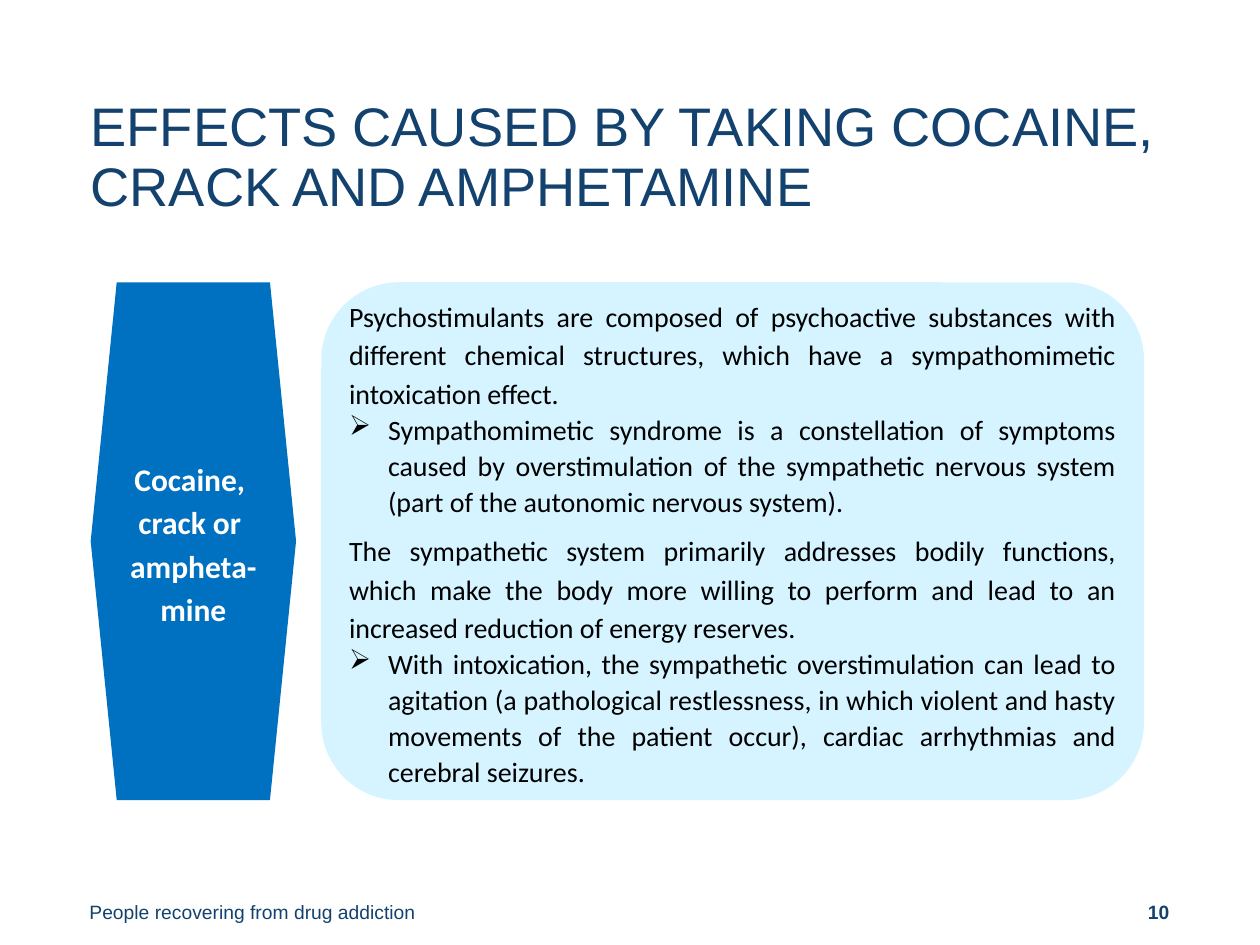
from dataclasses import dataclass

from lxml.etree import SubElement
from pptx import Presentation
from pptx.dml.color import RGBColor
from pptx.enum.shapes import MSO_SHAPE
from pptx.enum.text import MSO_ANCHOR, PP_ALIGN
from pptx.oxml.ns import qn
from pptx.util import Inches, Pt

COLS, ROWS = 100, 75


@dataclass(frozen=True)
class Theme:
    heading_font: str = "Arial"
    body_font: str = "Calibri"
    navy: str = "13426F"
    blue: str = "0070C0"
    pale: str = "D5F4FF"
    white: str = "FFFFFF"
    black: str = "000000"
    title_size: int = 31
    label_size: int = 18
    body_size: int = 16
    footer_size: int = 11


def add_bullet(p, char, indent):
    pPr = p._p.get_or_add_pPr()
    pPr.set("marL", str(Inches(indent)))
    pPr.set("indent", str(-Inches(indent)))
    SubElement(pPr, qn("a:buChar")).set("char", char)


def write(tf, text, *, font, size, color, bold=False, align=PP_ALIGN.LEFT,
          spacing=1.0, before=None, bullet=None):
    """Fill the first empty paragraph of tf, or append one; \\n breaks a line."""
    p = tf.paragraphs[-1]
    if p.runs:
        p = tf.add_paragraph()
    if bullet:
        add_bullet(p, bullet, 0.31)
    p.alignment, p.line_spacing = align, spacing
    if before:
        p.space_before = Pt(before)
    for i, line in enumerate(text.split("\n")):
        if i:
            p.add_line_break()
        r = p.add_run()
        r.text = line
        r.font.name, r.font.size, r.font.bold = font, Pt(size), bold
        r.font.color.rgb = RGBColor.from_string(color)


class SlideBuilder:
    def __init__(self, prs, theme):
        self.theme = theme
        self.slide = prs.slides.add_slide(prs.slide_layouts[6])
        self.cell_w = prs.slide_width / COLS
        self.cell_h = prs.slide_height / ROWS

    def place(self, col, row, cols, rows):
        return (round(col * self.cell_w), round(row * self.cell_h),
                round(cols * self.cell_w), round(rows * self.cell_h))

    def frame(self, sp, anchor, insets):
        tf = sp.text_frame
        tf.word_wrap = True
        tf.vertical_anchor = anchor
        (tf.margin_left, tf.margin_top,
         tf.margin_right, tf.margin_bottom) = map(Inches, insets)
        return tf

    def text(self, box, anchor, insets, text, **fmt):
        sp = self.slide.shapes.add_textbox(*self.place(*box))
        write(self.frame(sp, anchor, insets), text,
              font=self.theme.heading_font, color=self.theme.navy, **fmt)

    def panel(self, kind, box, adjust, fill, insets):
        """Add a filled shape without outline and return its text frame."""
        sp = self.slide.shapes.add_shape(kind, *self.place(*box))
        sp.adjustments[0] = adjust
        sp.shadow.inherit = False
        sp.fill.solid()
        sp.fill.fore_color.rgb = RGBColor.from_string(fill)
        sp.line.fill.background()
        return self.frame(sp, MSO_ANCHOR.MIDDLE, insets)

    def footer(self, box, insets, text, **fmt):
        self.text(box, MSO_ANCHOR.BOTTOM, insets, text,
                  size=self.theme.footer_size, spacing=Pt(13.3), **fmt)


EFFECTS = [
    ("Psychostimulants are composed of psychoactive substances with different "
     "chemical structures, which have a sympathomimetic intoxication effect.",
     "Sympathomimetic syndrome is a constellation of symptoms caused by "
     "overstimulation of the sympathetic nervous system (part of the autonomic "
     "nervous system)."),
    ("The sympathetic system primarily addresses bodily functions, which make "
     "the body more willing to perform and lead to an increased reduction of "
     "energy reserves.",
     "With intoxication, the sympathetic overstimulation can lead to agitation "
     "(a pathological restlessness, in which violent and hasty movements of the "
     "patient occur), cardiac arrhythmias and cerebral seizures."),
]


def main():
    prs = Presentation()
    prs.slide_width, prs.slide_height = Inches(10), Inches(7.5)
    t = Theme()
    s = SlideBuilder(prs, t)

    s.footer((0, 68.9, 33.8, 6), (0.71, 0.05, 0, 0.16),
             "People recovering from drug addiction")
    s.footer((77.4, 68.9, 22.5, 6), (0, 0.05, 0.71, 0.16), "10",
             bold=True, align=PP_ALIGN.RIGHT)
    s.text((7.2, 7.3, 85.5, 11.2), MSO_ANCHOR.TOP, (0, 0.05, 0.1, 0.05),
           "EFFECTS CAUSED BY TAKING COCAINE, CRACK AND AMPHETAMINE",
           size=t.title_size, spacing=Pt(34))

    top, height = 22.4, 41.1
    label = s.panel(MSO_SHAPE.HEXAGON, (7.2, top, 16.3, height), 0.127, t.blue,
                    (0.1, 0.05, 0.1, 0.05))
    write(label, "Cocaine, \ncrack or \nampheta-mine", font=t.body_font,
          size=t.label_size, color=t.white, bold=True,
          align=PP_ALIGN.CENTER, spacing=1.15)

    body = s.panel(MSO_SHAPE.ROUNDED_RECTANGLE, (25.5, top, 65.3, height), 0.15,
                   t.pale, (0.04,) * 4)
    fmt = dict(font=t.body_font, size=t.body_size, color=t.black,
               align=PP_ALIGN.JUSTIFY)
    for i, (statement, detail) in enumerate(EFFECTS):
        write(body, statement, spacing=1.15, before=6 if i else None, **fmt)
        write(body, detail, spacing=1.07, bullet="➢", **fmt)

    prs.save("out.pptx")


if __name__ == "__main__":
    main()
